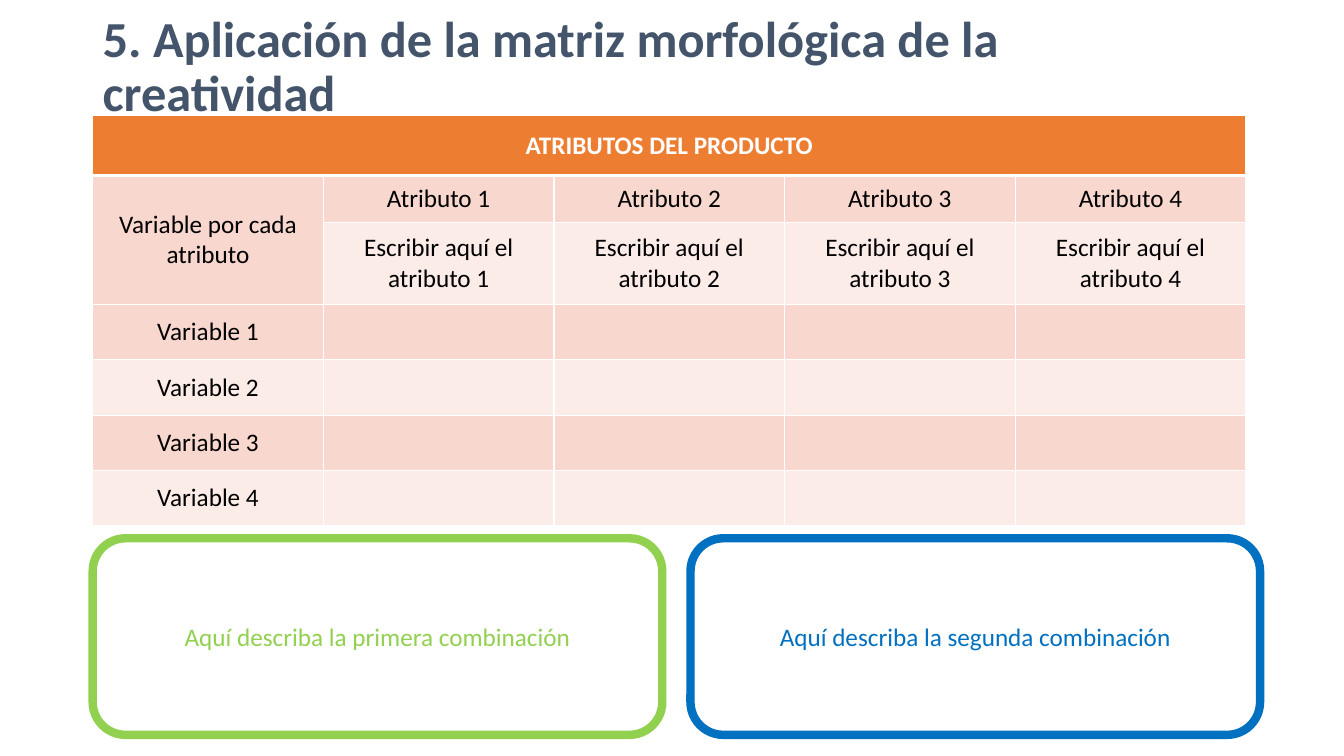
from dataclasses import dataclass

from lxml import etree
from pptx import Presentation
from pptx.dml.color import RGBColor
from pptx.enum.shapes import MSO_SHAPE
from pptx.enum.text import MSO_ANCHOR, PP_ALIGN
from pptx.oxml.ns import qn
from pptx.util import Inches, Pt

ROUNDED = MSO_SHAPE.ROUNDED_RECTANGLE
MIDDLE = MSO_ANCHOR.MIDDLE
LEFT, CENTER = PP_ALIGN.LEFT, PP_ALIGN.CENTER


@dataclass(frozen=True)
class Theme:
    font: str = "Calibri"
    title_size: int = 36
    body_size: int = 18
    title: str = "44546A"
    header: str = "ED7D31"
    bands: tuple[str, str] = ("F8D7CE", "FCECE8")
    white: str = "FFFFFF"
    black: str = "000000"
    green: str = "92D050"
    blue: str = "0070C0"
    thin: int = 1
    thick: int = 3
    outline: int = 6


@dataclass(frozen=True)
class Box:
    """Place and size as percentages of the slide."""
    left: float
    top: float
    width: float
    height: float


@dataclass(frozen=True)
class Combination:
    text: str
    color: str
    left: float


THEME = Theme()
SLIDE_W, SLIDE_H = Inches(13.333), Inches(7.5)

# Layout, in percent of the slide
MARGIN = 6.9
TITLE_BOX = Box(MARGIN, 2.67, 86.25, 12.67)
COLUMN_W = 17.16
ROW_HEIGHTS = [7.87, 6.27, 10.8] + [7.33] * 4
TABLE_TOP = 15.33
COMBO_TOP, COMBO_W, COMBO_H = 71.2, 42.38, 26

# Content
TITLE = "5. Aplicación de la matriz morfológica de la creatividad"
NUMBERS = range(1, 5)
ROWS = [
    ["ATRIBUTOS DEL PRODUCTO"] + [""] * 4,
    ["Variable por cada atributo"] + [f"Atributo {n}" for n in NUMBERS],
    [""] + [f"Escribir aquí el atributo {n}" for n in NUMBERS],
] + [[f"Variable {n}"] + [""] * 4 for n in NUMBERS]
COMBINATIONS = [
    Combination("Aquí describa la primera combinación", THEME.green, MARGIN),
    Combination("Aquí describa la segunda combinación", THEME.blue, 51.38),
]


def across(share: float) -> int:
    return round(SLIDE_W * share / 100)


def down(share: float) -> int:
    return round(SLIDE_H * share / 100)


def place(box: Box) -> tuple[int, int, int, int]:
    return across(box.left), down(box.top), across(box.width), down(box.height)


def write(tf, text: str, color: str, size: int = THEME.body_size,
          bold: bool = False, align=CENTER) -> None:
    tf.word_wrap = True
    p = tf.paragraphs[0]
    p.text = text
    p.alignment = align
    p.font.name, p.font.size, p.font.bold = THEME.font, Pt(size), bold
    p.font.color.rgb = RGBColor.from_string(color)


def set_borders(cell, top: int, bottom: int) -> None:
    tc_pr = cell._tc.get_or_add_tcPr()
    sides = {"L": THEME.thin, "R": THEME.thin, "T": top, "B": bottom}
    for i, (side, width) in enumerate(sides.items()):
        ln = etree.Element(qn(f"a:ln{side}"), w=str(Pt(width)))
        fill = etree.SubElement(ln, qn("a:solidFill"))
        etree.SubElement(fill, qn("a:srgbClr"), val=THEME.white)
        tc_pr.insert(i, ln)


def add_title(s) -> None:
    tf = s.shapes.add_textbox(*place(TITLE_BOX)).text_frame
    write(tf, TITLE, THEME.title, THEME.title_size, bold=True, align=LEFT)
    tf.vertical_anchor = MIDDLE
    tf.margin_right = Inches(0.2)
    tf.paragraphs[0].line_spacing = 0.9


def add_matrix(s) -> None:
    n_cols = len(ROWS[0])
    box = Box(MARGIN, TABLE_TOP, COLUMN_W * n_cols, sum(ROW_HEIGHTS))
    table = s.shapes.add_table(len(ROWS), n_cols, *place(box)).table
    for column in table.columns:
        column.width = across(COLUMN_W)
    for r, texts in enumerate(ROWS):
        table.rows[r].height = down(ROW_HEIGHTS[r])
        is_header = r == 0
        fill = THEME.header if is_header else THEME.bands[(r - 1) % 2]
        color = THEME.white if is_header else THEME.black
        for c, text in enumerate(texts):
            cell = table.cell(r, c)
            cell.fill.solid()
            cell.fill.fore_color.rgb = RGBColor.from_string(fill)
            cell.vertical_anchor = MIDDLE
            write(cell.text_frame, text, color, bold=is_header)
            set_borders(cell, top=THEME.thick if r == 1 else THEME.thin,
                        bottom=THEME.thick if is_header else THEME.thin)
    table.cell(0, 0).merge(table.cell(0, n_cols - 1))
    table.cell(1, 0).merge(table.cell(2, 0))


def add_combination(s, combo: Combination) -> None:
    box = Box(combo.left, COMBO_TOP, COMBO_W, COMBO_H)
    sp = s.shapes.add_shape(ROUNDED, *place(box))
    sp.shadow.inherit = False
    sp.fill.background()
    sp.line.color.rgb = RGBColor.from_string(combo.color)
    sp.line.width = Pt(THEME.outline)
    sp.text_frame.vertical_anchor = MIDDLE
    write(sp.text_frame, combo.text, combo.color)


def main() -> None:
    prs = Presentation()
    prs.slide_width, prs.slide_height = SLIDE_W, SLIDE_H
    s = prs.slides.add_slide(prs.slide_layouts[6])
    add_title(s)
    add_matrix(s)
    for combo in COMBINATIONS:
        add_combination(s, combo)
    prs.save("out.pptx")


if __name__ == "__main__":
    main()
